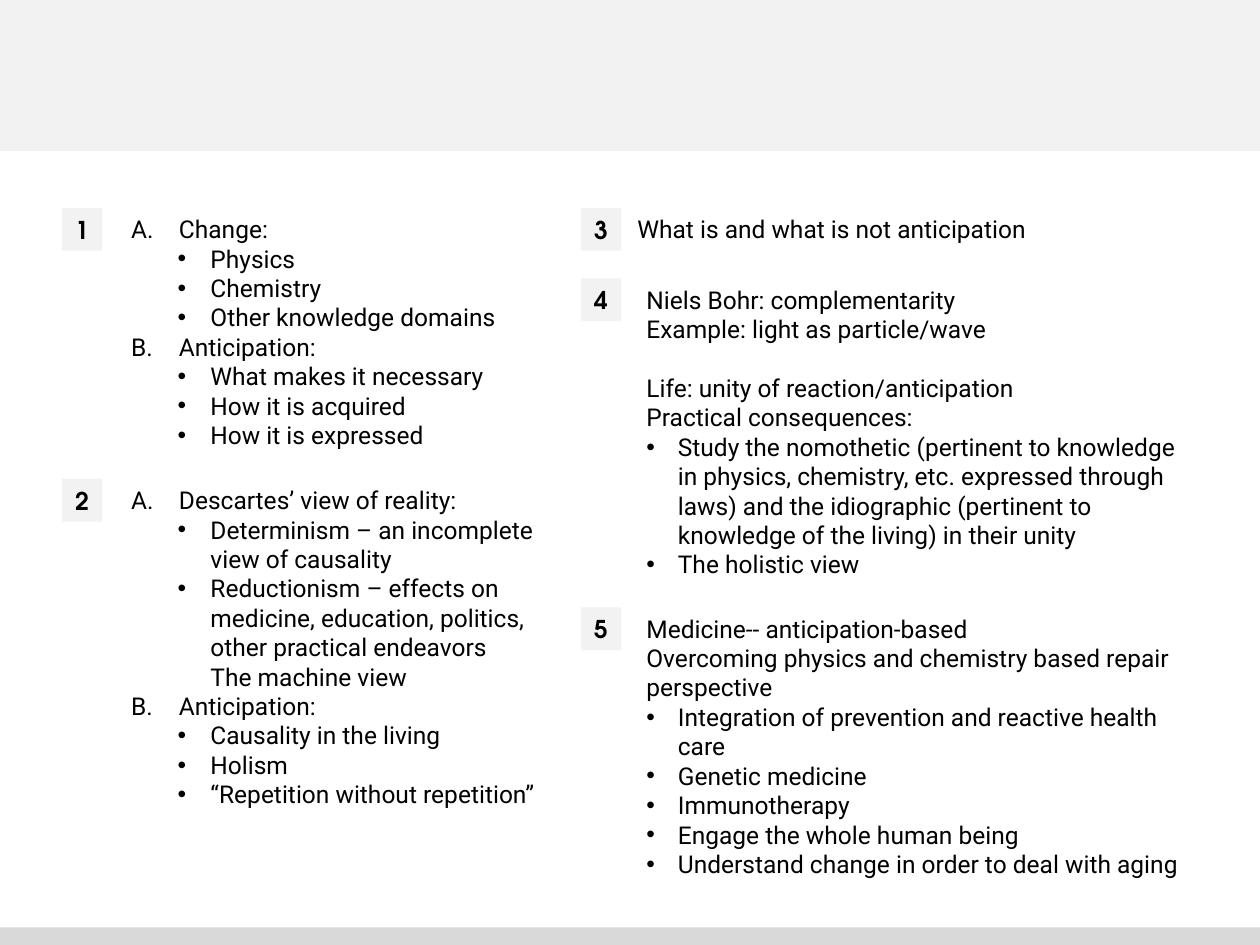
from lxml import etree
from pptx import Presentation
from pptx.dml.color import RGBColor
from pptx.enum.shapes import MSO_SHAPE
from pptx.enum.text import MSO_ANCHOR, MSO_AUTO_SIZE, PP_ALIGN
from pptx.oxml.ns import qn
from pptx.util import Inches, Pt

RECTANGLE = MSO_SHAPE.RECTANGLE
TOP, MIDDLE = MSO_ANCHOR.TOP, MSO_ANCHOR.MIDDLE
NO_AUTOFIT = MSO_AUTO_SIZE.NONE
LEFT, CENTER = PP_ALIGN.LEFT, PP_ALIGN.CENTER

BLACK = RGBColor(0, 0, 0)
THEME = {
    "panel": RGBColor(0xF2, 0xF2, 0xF2),
    "footer": RGBColor(0xD9, 0xD9, 0xD9),
    "body": {"name": "Roboto", "size": Pt(14), "bold": False},
    "badge": {"name": "TeX Gyre Adventor", "size": Pt(14), "bold": True},
    "blank_line": Pt(16.8),
}

# Paragraph kinds: level, left margin, first-line indent, bullet element, bullet attributes
KINDS = {
    "plain": (0, 0, 0, "a:buNone", {}),
    "gap": (0, 0, 0, "a:buNone", {}),
    "letter": (0, 0.38, -0.38, "a:buAutoNum", {"type": "alphaUcPeriod"}),
    "sub": (1, 0.63, -0.26, "a:buChar", {"char": "•"}),
    "bullet": (0, 0.25, -0.25, "a:buChar", {"char": "•"}),
}

# Left, top, width, height and paragraphs of each list
LISTS = [
    (0.94, 1.65, 3.5, 2.22, [
        ("letter", "Change:"),
        ("sub", "Physics"),
        ("sub", "Chemistry"),
        ("sub", "Other knowledge domains"),
        ("letter", "Anticipation:"),
        ("sub", "What makes it necessary"),
        ("sub", "How it is acquired"),
        ("sub", "How it is expressed"),
    ]),
    (0.94, 3.8, 3.5, 2.93, [
        ("letter", "Descartes’ view of reality:"),
        ("sub", "Determinism – an incomplete view of causality"),
        ("sub", "Reductionism – effects on medicine, education, politics, "
                "other practical endeavors\nThe machine view"),
        ("letter", "Anticipation:"),
        ("sub", "Causality in the living"),
        ("sub", "Holism"),
        ("sub", "“Repetition without repetition”"),
    ]),
    (5.03, 2.21, 4.48, 2.69, [
        ("plain", "Niels Bohr: complementarity"),
        ("plain", "Example: light as particle/wave"),
        ("gap", "Life: unity of reaction/anticipation"),
        ("plain", "Practical consequences:"),
        ("bullet", "Study the nomothetic (pertinent to knowledge in physics, "
                   "chemistry, etc. expressed through laws) and the idiographic "
                   "(pertinent to knowledge of the living) in their unity"),
        ("bullet", "The holistic view"),
    ]),
    (5.03, 4.82, 4.48, 2.22, [
        ("plain", "Medicine-- anticipation-based"),
        ("plain", "Overcoming physics and chemistry based repair perspective"),
        ("bullet", "Integration of prevention and reactive health care"),
        ("bullet", "Genetic medicine"),
        ("bullet", "Immunotherapy"),
        ("bullet", "Engage the whole human being"),
        ("bullet", "Understand change in order to deal with aging"),
    ]),
]
QUESTION = [("plain", "What is and what is not anticipation")]
BADGES = [(0.49, 1.65), (0.49, 3.8), (4.61, 1.65), (4.61, 2.21), (4.61, 4.82)]


def fill_text(frame, paragraphs, font, alignment=LEFT, anchor=TOP, wrap=True):
    for name, value in {"word_wrap": wrap, "auto_size": NO_AUTOFIT,
                        "vertical_anchor": anchor}.items():
        setattr(frame, name, value)
    for index, (kind, text) in enumerate(paragraphs):
        paragraph = frame.add_paragraph() if index else frame.paragraphs[0]
        level, margin, indent, bullet, attributes = KINDS[kind]
        paragraph.text = text
        paragraph.level = level
        paragraph.alignment = alignment
        paragraph.space_before = THEME["blank_line"] if kind == "gap" else Pt(0)
        properties = paragraph._p.get_or_add_pPr()
        properties.set("marL", str(Inches(margin)))
        properties.set("indent", str(Inches(indent)))
        etree.SubElement(properties, qn(bullet), attributes)
        for run in paragraph.runs:
            for name, value in font.items():
                setattr(run.font, name, value)
            run.font.color.rgb = BLACK
        # Line breaks need the same type size as the runs around them
        for line_break in paragraph._p.findall(qn("a:br")):
            etree.SubElement(line_break, qn("a:rPr"), sz=str(int(font["size"].pt * 100)))


def add_block(left, top, width, height, color):
    shape = slide.shapes.add_shape(
        RECTANGLE, Inches(left), Inches(top), Inches(width), Inches(height))
    shape.shadow.inherit = False
    shape.fill.solid()
    shape.fill.fore_color.rgb = color
    shape.line.fill.background()
    return shape


presentation = Presentation()
presentation.slide_width, presentation.slide_height = Inches(10), Inches(7.5)
comparison_layout = presentation.slide_layouts[4]
slide = presentation.slides.add_slide(comparison_layout)

# The slide has no title
title = slide.shapes.title
title.element.getparent().remove(title.element)

# Footer strip and header band
add_block(0, 7.36, 10, 0.14, THEME["footer"])
add_block(0, 0, 10, 1.2, THEME["panel"])

# Lists in the four body placeholders
for placeholder, (left, top, width, height, paragraphs) in zip(slide.placeholders, LISTS):
    for name, value in {"left": left, "top": top, "width": width, "height": height}.items():
        setattr(placeholder, name, Inches(value))
    fill_text(placeholder.text_frame, paragraphs, THEME["body"])

# Single line of the third item
question_box = slide.shapes.add_textbox(Inches(4.96), Inches(1.65), Inches(4.55), Inches(0.34))
fill_text(question_box.text_frame, QUESTION, THEME["body"])

# Numbered badges
for number, (left, top) in enumerate(BADGES, start=1):
    badge = add_block(left, top, 0.32, 0.34, THEME["panel"])
    fill_text(badge.text_frame, [("plain", str(number))], THEME["badge"], CENTER, MIDDLE, False)

presentation.save("out.pptx")
